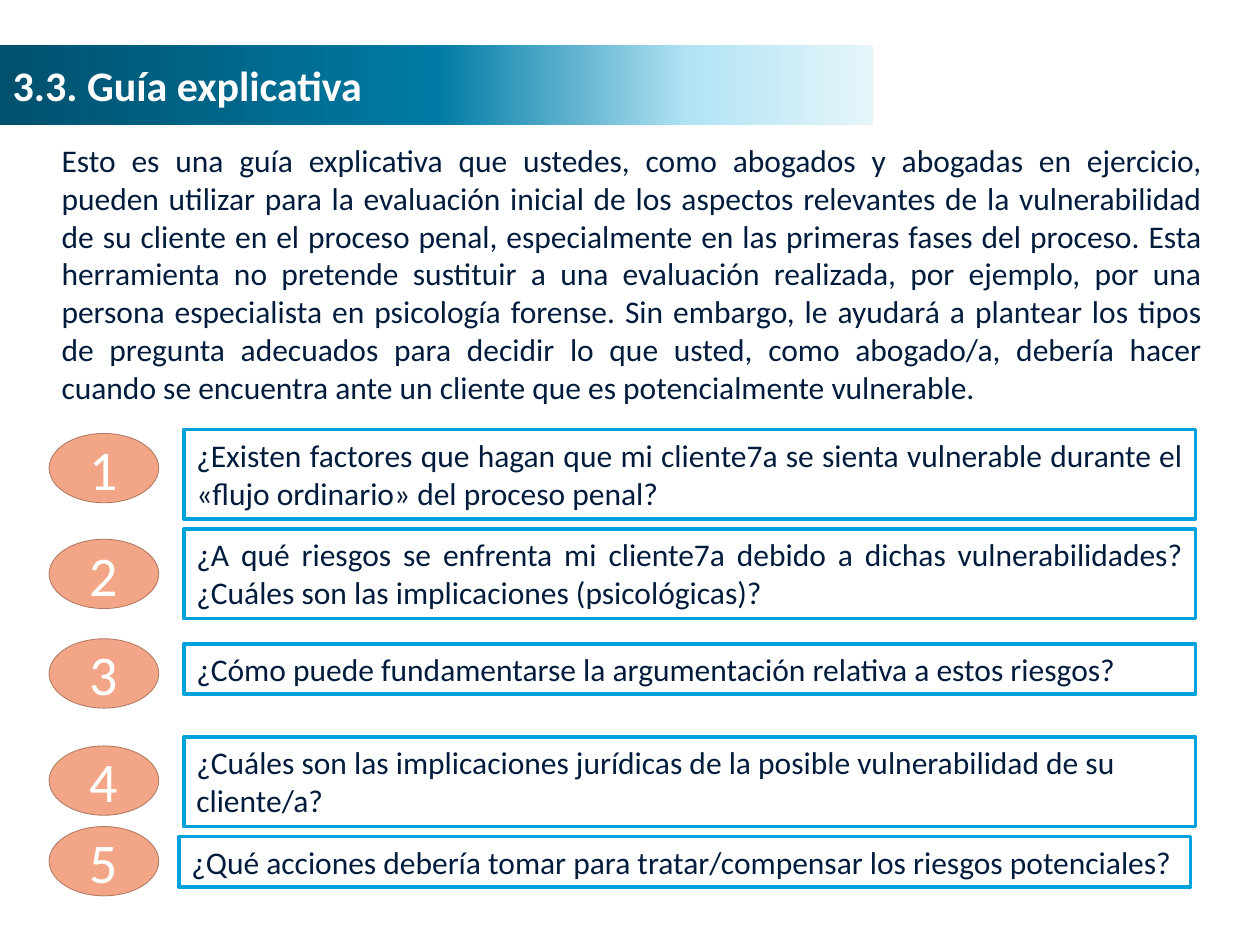
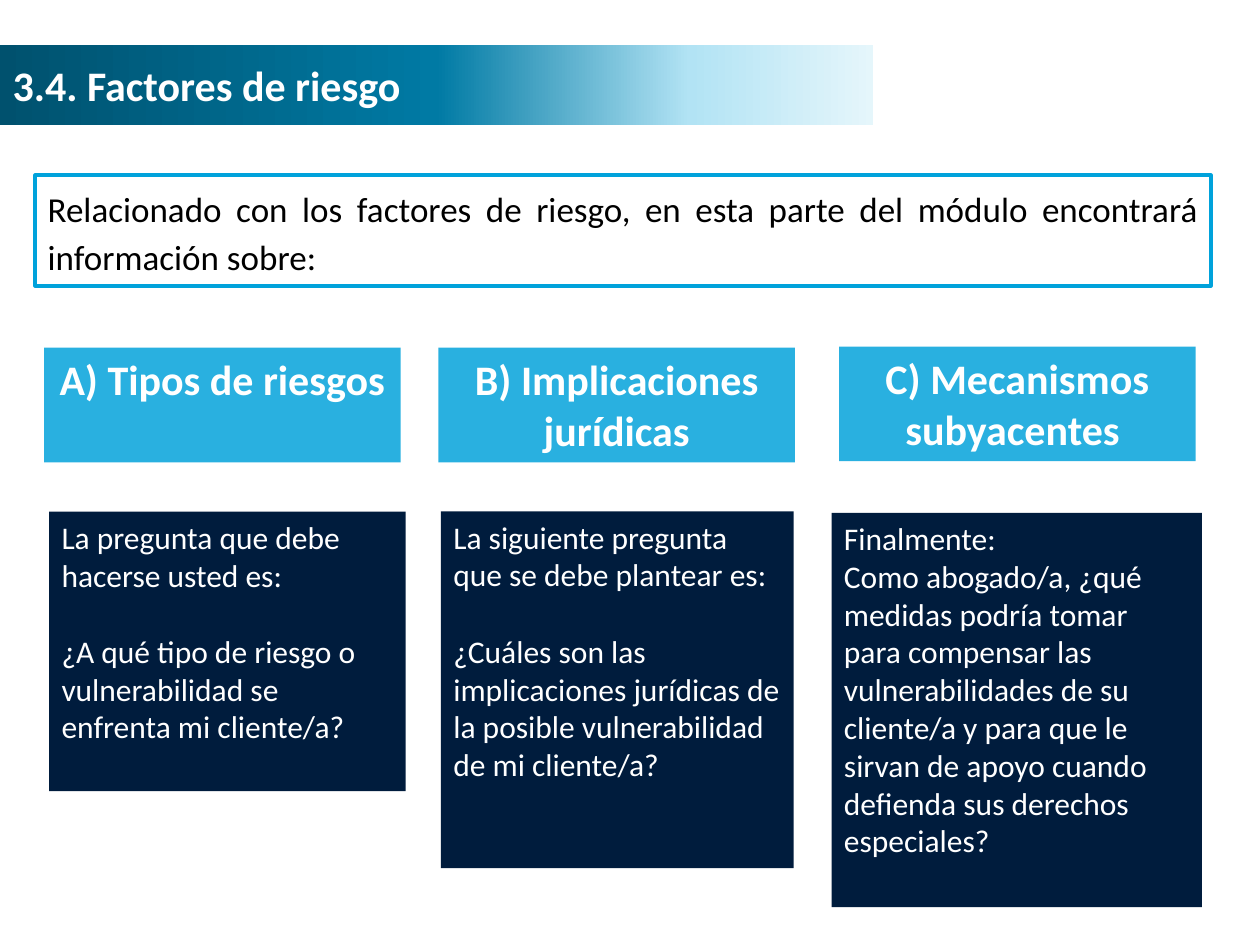
import pptx
import pptx.util
import pptx.dml.color
import pptx.enum.shapes
import pptx.enum.text
import pptx.oxml
import pptx.oxml.ns
from lxml import etree

Inches = pptx.util.Inches
Pt = pptx.util.Pt
KINDS = pptx.enum.shapes.MSO_SHAPE
ALIGN = pptx.enum.text.PP_ALIGN
ANCHOR = pptx.enum.text.MSO_ANCHOR
FONT = "Calibri"
HUES = {
    "navy": "001C3D",
    "sky": "00A2DB",
    "peach": "F3A687",
    "rust": "B47B64",
    "white": "FFFFFF",
    "black": "000000",
}
FADE = [(0, "00516E"), (50, "007AA4"), (79, "B2E3F4"), (100, "E5F6FB")]

INTRO = (
    "Esto es una guía explicativa que ustedes, como abogados y abogadas en ejercicio, "
    "pueden utilizar para la evaluación inicial de los aspectos relevantes de la "
    "vulnerabilidad de su cliente en el proceso penal, especialmente en las primeras "
    "fases del proceso. Esta herramienta no pretende sustituir a una evaluación "
    "realizada, por ejemplo, por una persona especialista en psicología forense. Sin "
    "embargo, le ayudará a plantear los tipos de pregunta adecuados para decidir lo que "
    "usted, como abogado/a, debería hacer cuando se encuentra ante un cliente que es "
    "potencialmente vulnerable."
)
STEPS = [
    (3.44, (1.46, 3.41, 8.03, 0.71), ALIGN.JUSTIFY,
     "¿Existen factores que hagan que mi cliente7a se sienta vulnerable durante el "
     "«flujo ordinario» del proceso penal?"),
    (4.28, (1.46, 4.2, 8.03, 0.71), ALIGN.JUSTIFY,
     "¿A qué riesgos se enfrenta mi cliente7a debido a dichas vulnerabilidades? "
     "¿Cuáles son las implicaciones (psicológicas)?"),
    (5.07, (1.46, 5.11, 8.03, 0.4), ALIGN.LEFT,
     "¿Cómo puede fundamentarse la argumentación relativa a estos riesgos?"),
    (5.92, (1.46, 5.85, 8.03, 0.71), ALIGN.LEFT,
     "¿Cuáles son las implicaciones jurídicas de la posible vulnerabilidad de su cliente/a?"),
    (6.56, (1.42, 6.64, 8.03, 0.4), ALIGN.JUSTIFY,
     "¿Qué acciones debería tomar para tratar/compensar los riesgos potenciales?"),
]
TOPICS = [
    ((0.35, 2.76, 2.83, 0.91), "A) Tipos de riesgos",
     (0.39, 4.06, 2.83, 2.22), 22,
     ["La pregunta que debe hacerse usted es:",
      "¿A qué tipo de riesgo o vulnerabilidad se enfrenta mi cliente/a?"]),
    ((3.48, 2.76, 2.83, 0.91), "B) Implicaciones jurídicas",
     (3.5, 4.06, 2.8, 2.83), 22,
     ["La siguiente pregunta que se debe plantear es:",
      "¿Cuáles son las implicaciones jurídicas de la posible vulnerabilidad de mi cliente/a?"]),
    ((6.66, 2.75, 2.83, 0.91), "C) Mecanismos subyacentes ",
     (6.6, 4.07, 2.94, 3.13), 0,
     ["Finalmente:",
      "Como abogado/a, ¿qué medidas podría tomar para compensar las vulnerabilidades de su "
      "cliente/a y para que le sirvan de apoyo cuando defienda sus derechos especiales?"]),
]


def color(name):
    return pptx.dml.color.RGBColor.from_string(HUES[name])


def write(shape, lines, size=18, hue="navy", bold=False, align=ALIGN.LEFT,
          anchor=ANCHOR.TOP, space=1.0, gap=0):
    frame = shape.text_frame
    frame.word_wrap = True
    frame.auto_size = pptx.enum.text.MSO_AUTO_SIZE.NONE
    frame.vertical_anchor = anchor
    for index, line in enumerate(lines):
        para = frame.paragraphs[0] if index == 0 else frame.add_paragraph()
        para.alignment = align
        para.line_spacing = space
        para.space_before = Pt(gap if index else 0)
        run = para.add_run()
        run.text = line
        run.font.name = FONT
        run.font.size = Pt(size)
        run.font.bold = bold
        run.font.color.rgb = color(hue)


def panel(slide, area, lines, kind=KINDS.RECTANGLE, fill="white", line=None,
          width=2, alpha=None, **style):
    shape = slide.shapes.add_shape(kind, *map(Inches, area))
    shape.shadow.inherit = False
    shape.fill.solid()
    shape.fill.fore_color.rgb = color(fill)
    if alpha:
        tint = shape._element.spPr.find(".//" + pptx.oxml.ns.qn("a:srgbClr"))
        etree.SubElement(tint, pptx.oxml.ns.qn("a:alpha"), val=str(alpha * 1000))
    if line:
        shape.line.color.rgb = color(line)
        shape.line.width = Pt(width)
    else:
        shape.line.fill.background()
    write(shape, lines, **style)


def banner(slide, words):
    title = slide.shapes.title
    title.left, title.top = Inches(0), Inches(0.36)
    title.width, title.height = Inches(6.93), Inches(0.63)
    stops = "".join(
        f'<a:gs pos="{place * 1000}"><a:srgbClr val="{hue}"/></a:gs>' for place, hue in FADE)
    space = pptx.oxml.ns.nsdecls("a")
    for part in (
        f'<a:prstGeom {space} prst="homePlate"><a:avLst/></a:prstGeom>',
        f'<a:gradFill {space}><a:gsLst>{stops}</a:gsLst><a:lin ang="0" scaled="0"/></a:gradFill>',
    ):
        title._element.spPr.append(pptx.oxml.parse_xml(part))
    write(title, [words], size=24, hue="white", bold=True, anchor=ANCHOR.MIDDLE)


def start(deck, words):
    slide = deck.slides.add_slide(deck.slide_layouts[5])
    banner(slide, words)
    return slide


def guide(deck):
    slide = start(deck, "3.3. Guía explicativa")
    box = slide.shapes.add_textbox(*map(Inches, (0.39, 1.07, 9.25, 2.05)))
    write(box, [INTRO], align=ALIGN.JUSTIFY)
    for number, (top, area, align, words) in enumerate(STEPS, 1):
        panel(slide, (0.39, top, 0.87, 0.55), [str(number)], kind=KINDS.OVAL,
              fill="peach", line="rust", width=0.5, size=32, hue="white",
              align=ALIGN.CENTER, anchor=ANCHOR.MIDDLE)
        panel(slide, area, [words], line="sky", align=align)


def risks(deck):
    slide = start(deck, "3.4. Factores de riesgo")
    panel(slide, (0.28, 1.39, 9.33, 0.88),
          ["Relacionado con los factores de riesgo, en esta parte del módulo "
           "encontrará información sobre:"],
          line="sky", size=20, hue="black", align=ALIGN.JUSTIFY, space=1.15)
    for head, name, body, gap, lines in TOPICS:
        panel(slide, head, [name], fill="sky", alpha=84, size=24, hue="white",
              bold=True, align=ALIGN.CENTER)
        panel(slide, body, lines, fill="navy", hue="white", gap=gap)


def main():
    deck = pptx.Presentation()
    deck.slide_width, deck.slide_height = Inches(10), Inches(7.5)
    guide(deck)
    risks(deck)
    deck.save("out.pptx")


if __name__ == "__main__":
    main()
